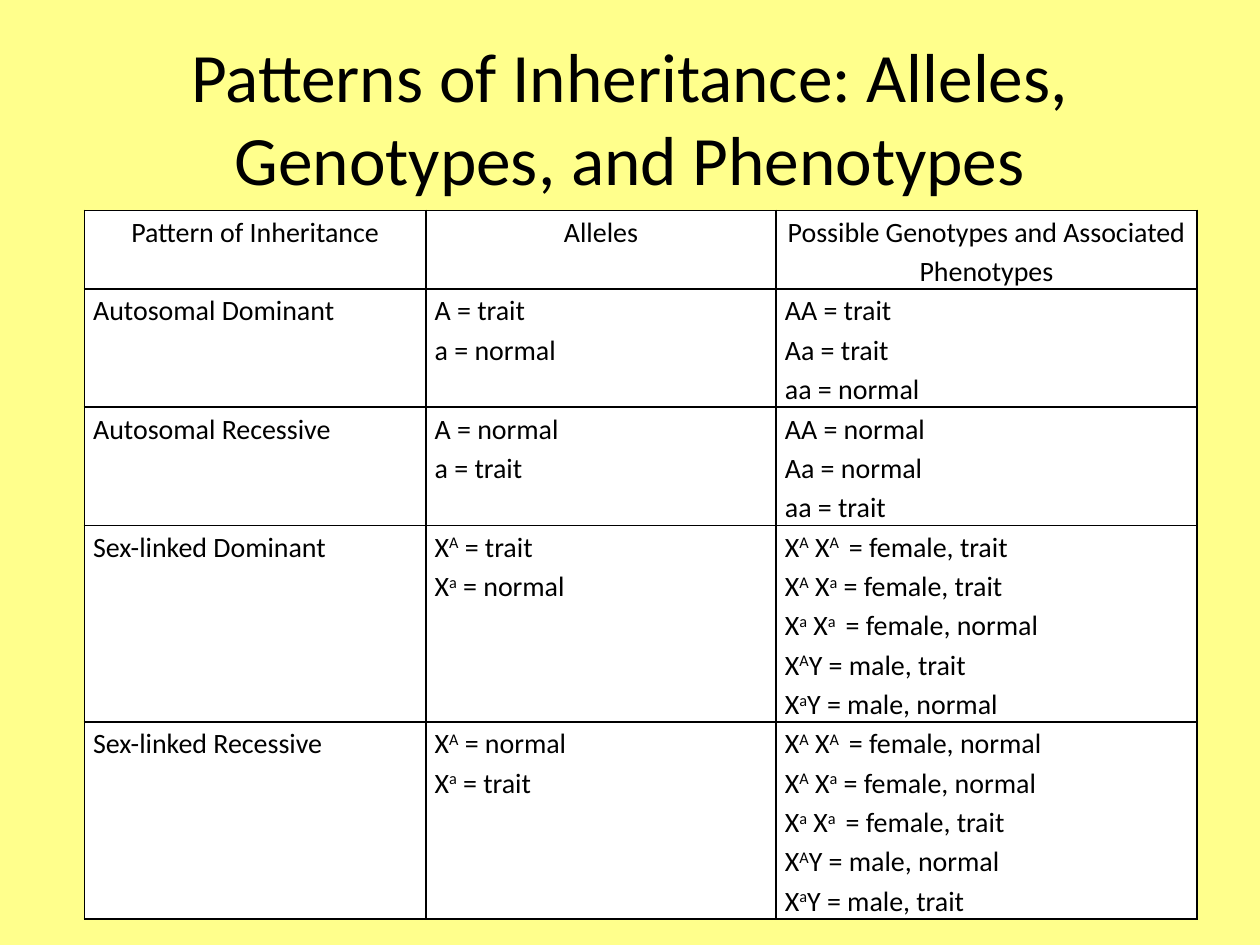
from dataclasses import dataclass

from lxml import etree
from pptx import Presentation
from pptx.dml.color import RGBColor
from pptx.enum.text import MSO_ANCHOR, MSO_AUTO_SIZE, PP_ALIGN
from pptx.oxml.ns import qn
from pptx.util import Inches, Pt

CENTER, LEFT = PP_ALIGN.CENTER, PP_ALIGN.LEFT
MIDDLE, TOP = MSO_ANCHOR.MIDDLE, MSO_ANCHOR.TOP
NO_AUTOFIT = MSO_AUTO_SIZE.NONE
TITLE_ONLY_LAYOUT = 5


@dataclass(frozen=True)
class Theme:
    font: str = "Calibri"
    background: str = "FFFF8C"
    cell: str = "FFFFFF"
    ink: str = "000000"
    title_size: float = 39.6
    table_size: float = 16
    line_spacing: float = 1.15
    border_width: float = 1


THEME = Theme()

TITLE = "Patterns of Inheritance: Alleles, Genotypes, and Phenotypes"
HEADERS = (
    "Pattern of Inheritance",
    "Alleles",
    "Possible Genotypes and Associated Phenotypes",
)
COLUMN_WIDTHS = (2.71, 2.78, 3.34)
LINES_PER_ROW = (2, 3, 3, 5, 5)
LINE_HEIGHT = 0.31

# Text between two carets is superscript.
AUTOSOMAL_ALLELES = ("A", "a")
AUTOSOMAL_GENOTYPES = ("AA", "Aa", "aa")
SEX_LINKED_ALLELES = ("X^A^", "X^a^")
SEX_LINKED_GENOTYPES = (
    "X^A^ X^A ^ = female,",
    "X^A^ X^a^ = female,",
    "X^a^ X^a ^ = female,",
    "X^A^Y = male,",
    "X^a^Y = male,",
)


def autosomal_row(name, allele_results, genotype_results):
    return (
        [name],
        [f"{a} = {r}" for a, r in zip(AUTOSOMAL_ALLELES, allele_results)],
        [f"{g} = {r}" for g, r in zip(AUTOSOMAL_GENOTYPES, genotype_results)],
    )


def sex_linked_row(name, allele_results, genotype_results):
    return (
        [name],
        [f"{a} = {r}" for a, r in zip(SEX_LINKED_ALLELES, allele_results)],
        [f"{g} {r}" for g, r in zip(SEX_LINKED_GENOTYPES, genotype_results)],
    )


T, N = "trait", "normal"
ROWS = (
    tuple([header] for header in HEADERS),
    autosomal_row("Autosomal Dominant", (T, N), (T, T, N)),
    autosomal_row("Autosomal Recessive", (N, T), (N, N, T)),
    sex_linked_row("Sex-linked Dominant", (T, N), (T, T, N, T, N)),
    sex_linked_row("Sex-linked Recessive", (N, T), (N, N, T, N, T)),
)


def format_font(font, size):
    font.name = THEME.font
    font.size = Pt(size)
    font.color.rgb = RGBColor.from_string(THEME.ink)


def add_title(slide, left, top, width, height):
    title = slide.shapes.title
    title.left, title.top, title.width, title.height = left, top, width, height
    frame = title.text_frame
    frame.text = TITLE
    frame.word_wrap = True
    frame.auto_size = NO_AUTOFIT
    frame.vertical_anchor = MIDDLE
    paragraph = frame.paragraphs[0]
    paragraph.alignment = CENTER
    format_font(paragraph.runs[0].font, THEME.title_size)


def write_line(paragraph, line, alignment):
    paragraph.alignment = alignment
    paragraph.line_spacing = THEME.line_spacing
    for index, piece in enumerate(line.split("^")):
        if not piece:
            continue
        run = paragraph.add_run()
        run.text = piece
        format_font(run.font, THEME.table_size)
        if index % 2:
            run.font._element.set("baseline", "30000")


def add_borders(cell):
    properties = cell._tc.get_or_add_tcPr()
    for side in ("a:lnL", "a:lnR", "a:lnT", "a:lnB"):
        border = etree.SubElement(properties, qn(side), w=str(Pt(THEME.border_width)))
        fill = etree.SubElement(border, qn("a:solidFill"))
        etree.SubElement(fill, qn("a:srgbClr"), val=THEME.ink)


def fill_cell(cell, lines, alignment):
    add_borders(cell)
    cell.fill.solid()
    cell.fill.fore_color.rgb = RGBColor.from_string(THEME.cell)
    cell.margin_left = cell.margin_right = Inches(0.07)
    cell.margin_top = cell.margin_bottom = 0
    cell.vertical_anchor = TOP
    frame = cell.text_frame
    for index, line in enumerate(lines):
        paragraph = frame.add_paragraph() if index else frame.paragraphs[0]
        write_line(paragraph, line, alignment)


def add_inheritance_table(slide, left, top, width, height):
    table = slide.shapes.add_table(
        len(ROWS), len(HEADERS), left, top, width, height
    ).table
    table.first_row = table.horz_banding = False
    for column, column_width in zip(table.columns, COLUMN_WIDTHS):
        column.width = Inches(column_width)
    for row, line_count in zip(table.rows, LINES_PER_ROW):
        row.height = Inches(LINE_HEIGHT * line_count)
    for row_index, cells in enumerate(ROWS):
        alignment = LEFT if row_index else CENTER
        for column_index, lines in enumerate(cells):
            fill_cell(table.cell(row_index, column_index), lines, alignment)


def main():
    presentation = Presentation()
    presentation.slide_width = Inches(10)
    presentation.slide_height = Inches(7.5)
    slide = presentation.slides.add_slide(
        presentation.slide_layouts[TITLE_ONLY_LAYOUT]
    )
    background = slide.background.fill
    background.solid()
    background.fore_color.rgb = RGBColor.from_string(THEME.background)
    add_title(slide, Inches(0.5), Inches(0.3), Inches(9), Inches(1.25))
    add_inheritance_table(
        slide,
        Inches(0.67),
        Inches(1.67),
        Inches(sum(COLUMN_WIDTHS)),
        Inches(LINE_HEIGHT * sum(LINES_PER_ROW)),
    )
    presentation.save("out.pptx")


if __name__ == "__main__":
    main()
